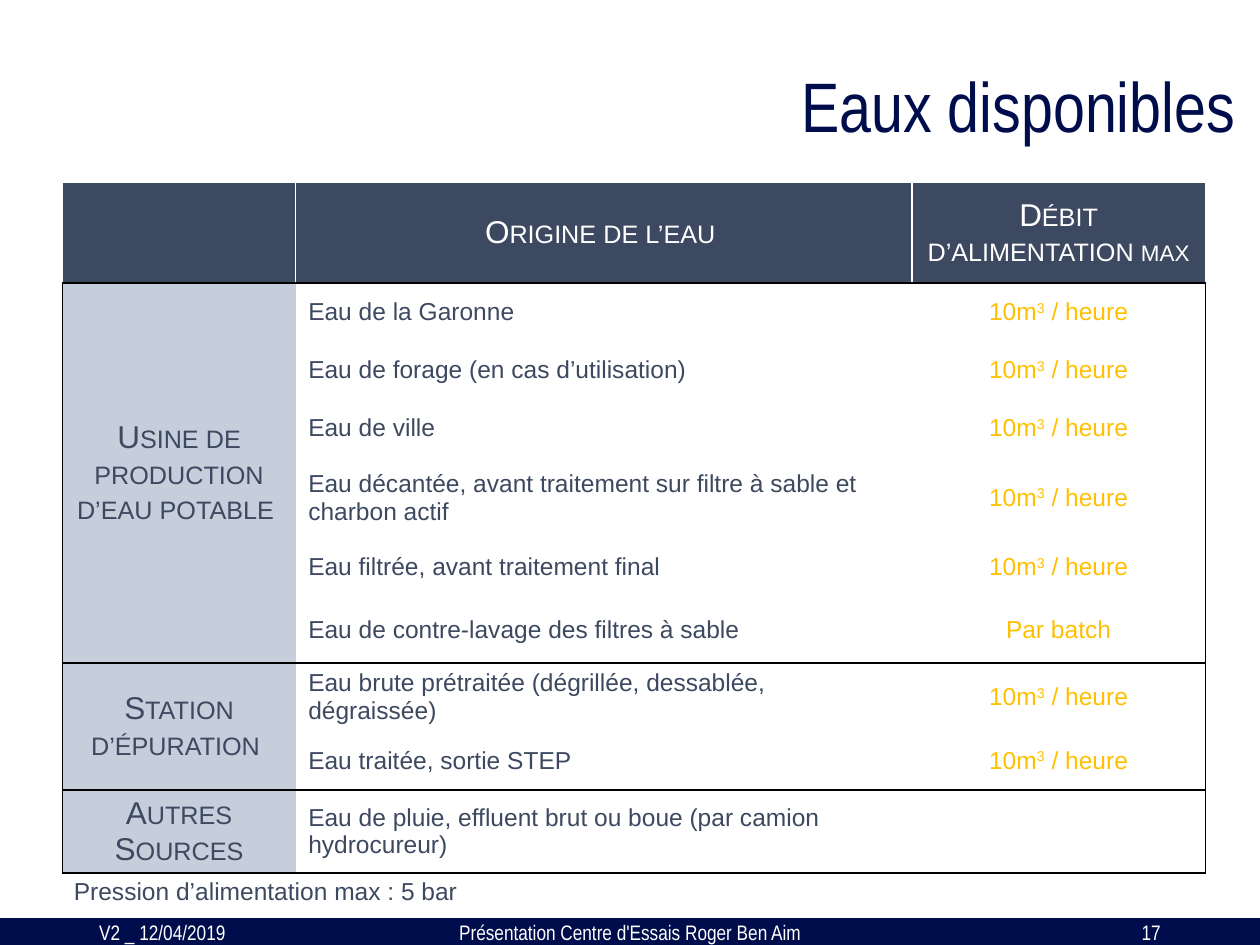
from lxml import etree
from pptx import Presentation
from pptx.dml.color import RGBColor
from pptx.enum import shapes, text as t
from pptx.oxml.ns import qn
from pptx.util import Cm, Pt

NAVY, SLATE, PALE, AMBER = "000D4C", "3D4960", "C7CEDB", "FFC000"
WHITE, BLACK = "FFFFFF", "000000"
LEFT, CENTER, RIGHT = t.PP_ALIGN.LEFT, t.PP_ALIGN.CENTER, t.PP_ALIGN.RIGHT
MIDDLE, TOP = t.MSO_ANCHOR.MIDDLE, t.MSO_ANCHOR.TOP
NO_STYLE = "{2D5ABB26-0587-4C30-8999-92F81FD0307C}"


def write(frame, pieces, size=14, color=SLATE, font="Arial", align=LEFT,
          anchor=MIDDLE, small_caps=False, spacing=None):
    """Fill a text frame; each piece is (text, size or None, superscript)."""
    frame.word_wrap = True
    frame.vertical_anchor = anchor
    paragraph = frame.paragraphs[0]
    paragraph.alignment = align
    paragraph.line_spacing = spacing
    if isinstance(pieces, str):
        pieces = [(pieces, None, False)]
    for words, own_size, superscript in pieces:
        run = paragraph.add_run()
        run.text = words
        run.font.size = Pt(own_size or size)
        run.font.name = font
        run.font.color.rgb = RGBColor.from_string(color)
        properties = run.font._element
        if small_caps:
            properties.set("cap", "small")
        if superscript:
            properties.set("baseline", "30000")


def format_cell(cell, fill, borders):
    """Set fill, margins and 1 pt borders {side: colour}; other sides get none."""
    cell.vertical_anchor = MIDDLE
    cell.margin_top = cell.margin_bottom = Cm(0.03)
    properties = cell._tc.get_or_add_tcPr()
    for side in "LRTB":
        line = etree.SubElement(properties, qn(f"a:ln{side}"), w=str(Pt(1)))
        if side in borders:
            solid = etree.SubElement(line, qn("a:solidFill"))
            etree.SubElement(solid, qn("a:srgbClr"), val=borders[side])
        else:
            etree.SubElement(line, qn("a:noFill"))
    if fill:
        cell.fill.solid()
        cell.fill.fore_color.rgb = RGBColor.from_string(fill)
    else:
        cell.fill.background()


presentation = Presentation()
presentation.slide_width, presentation.slide_height = Cm(25.4), Cm(19.05)
slide = presentation.slides.add_slide(presentation.slide_layouts[6])

# Footer band
band = slide.shapes.add_shape(shapes.MSO_SHAPE.RECTANGLE, 0, Cm(18.52), Cm(25.4), Cm(0.53))
band.shadow.inherit = False
band.fill.solid()
band.fill.fore_color.rgb = RGBColor.from_string(NAVY)
band.line.color.rgb = RGBColor.from_string(NAVY)
band.line.width = Pt(1)

# Title, footer texts and note under the table
narrow = {"font": "Arial Narrow"}
footer = {**narrow, "size": 12, "color": WHITE}
texts = [
    ("Eaux disponibles", 6.83, 1.35, 18.31, 1.75,
     {**narrow, "size": 40, "color": NAVY, "align": RIGHT, "spacing": 0.9}),
    ("V2 _ 12/04/2019", 1.75, 18.54, 5.72, 0.51, footer),
    ("Présentation Centre d'Essais Roger Ben Aim", 8.41, 18.54, 8.59, 0.51,
     {**footer, "align": CENTER}),
    ("17", 17.93, 18.54, 5.72, 0.51, {**footer, "align": RIGHT}),
    ("Pression d’alimentation max : 5 bar", 1.24, 17.53, 18.42, 0.86, {"anchor": TOP}),
]
for words, left, top, width, height, style in texts:
    box = slide.shapes.add_textbox(Cm(left), Cm(top), Cm(width), Cm(height))
    write(box.text_frame, words, **style)

# Table of available waters
hourly = [("10m", None, False), ("3", None, True), (" / heure", None, False)]
headers = ["", "Origine de l’eau ",
           [("Débit d’alimentation ", None, False), ("max", 16, False)]]
groups = [
    ("Usine de production d’eau potable ", WHITE, [
        ("Eau de la Garonne", hourly),
        ("Eau de forage (en cas d’utilisation)", hourly),
        ("Eau de ville", hourly),
        ("Eau décantée, avant traitement sur filtre à sable et charbon actif", hourly),
        ("Eau filtrée, avant traitement final", hourly),
        ("Eau de contre-lavage des filtres à sable", "Par batch")]),
    ("Station d’épuration ", None, [
        ("Eau brute prétraitée (dégrillée, dessablée, dégraissée)", hourly),
        ("Eau traitée, sortie STEP", hourly)]),
    ("Autres Sources", None, [
        ("Eau de pluie, effluent brut ou boue (par camion hydrocureur)", "")]),
]
column_widths = [4.7, 12.42, 5.92]
row_heights = [2.03, 1.17, 1.17, 1.17, 1.63, 1.17, 1.35, 1.37, 1.19, 1.67]

graphic = slide.shapes.add_table(len(row_heights), len(column_widths), Cm(1.26), Cm(3.68),
                                 Cm(sum(column_widths)), Cm(sum(row_heights)))
table = graphic.table
table.first_row = table.horz_banding = False
table._tbl.tblPr.find(qn("a:tableStyleId")).text = NO_STYLE
for column, width in zip(table.columns, column_widths):
    column.width = Cm(width)
for row, height in zip(table.rows, row_heights):
    row.height = Cm(height)

heading = {"size": 18, "align": CENTER, "small_caps": True}
for cell, words in zip(table.rows[0].cells, headers):
    format_cell(cell, SLATE, {"L": WHITE, "R": WHITE, "T": WHITE, "B": BLACK})
    if words:
        write(cell.text_frame, words, color=WHITE, **heading)

first = 1
for name, body_fill, waters in groups:
    last = first + len(waters) - 1
    group_cell = table.cell(first, 0)
    if last > first:
        group_cell.merge(table.cell(last, 0))
    write(group_cell.text_frame, name, **heading)
    for index, (origin, flow) in enumerate(waters, first):
        edges = {}
        if index == first:
            edges["T"] = BLACK
        if index == last:
            edges["B"] = BLACK
        name_cell, origin_cell, flow_cell = table.rows[index].cells
        # A merged name cell spans the group, so it carries both outer edges
        format_cell(name_cell, PALE, {"L": BLACK, "T": BLACK, "B": BLACK}
                    if index == first else {**edges, "L": BLACK})
        format_cell(origin_cell, body_fill, edges)
        format_cell(flow_cell, body_fill, {**edges, "R": BLACK})
        write(origin_cell.text_frame, origin)
        if flow:
            write(flow_cell.text_frame, flow, color=AMBER, align=CENTER)
    first = last + 1

presentation.save("out.pptx")
